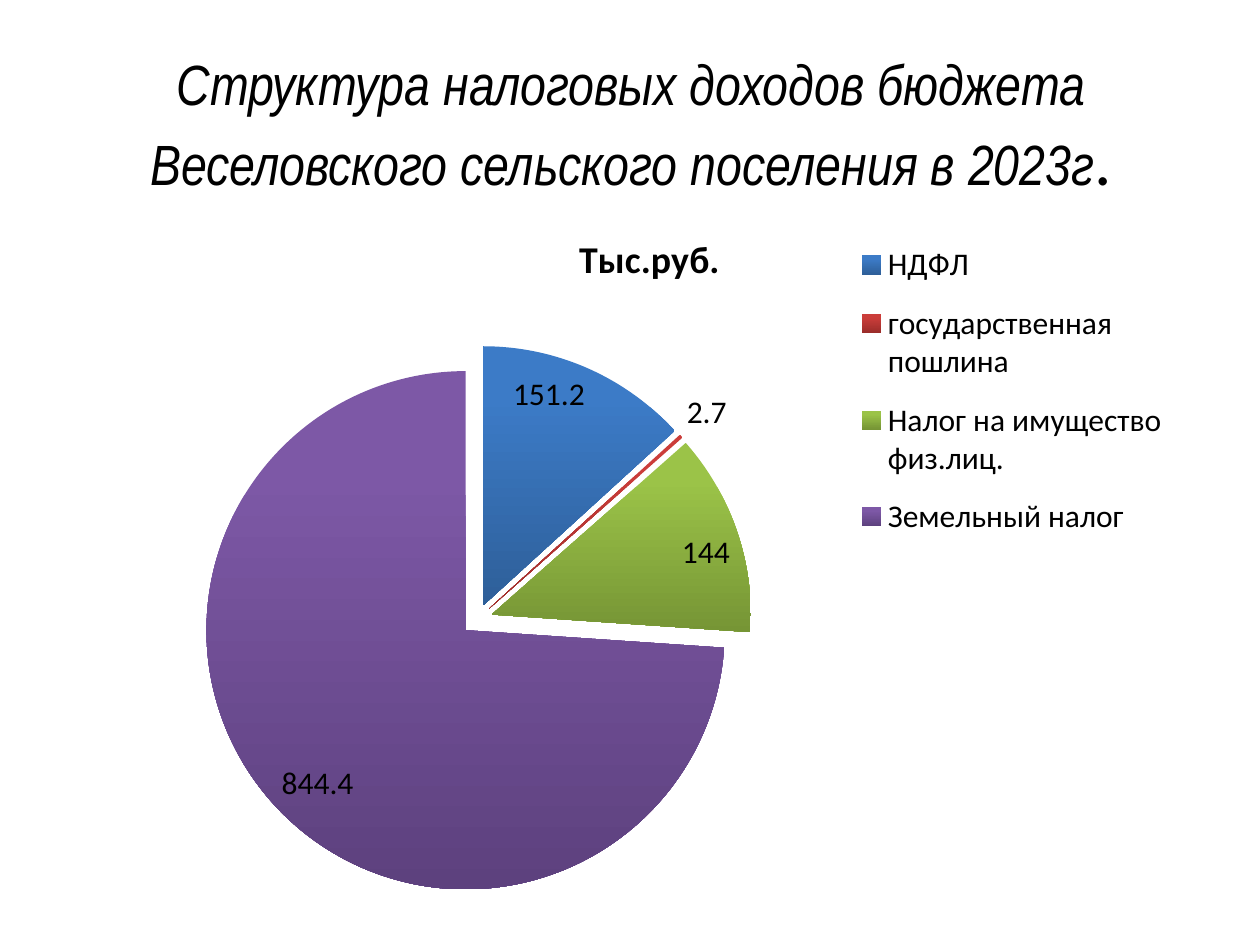
from lxml import etree
from pptx import Presentation
from pptx.chart.data import CategoryChartData
from pptx.dml.color import RGBColor
from pptx.enum.chart import XL_CHART_TYPE as ChartType
from pptx.enum.chart import XL_LABEL_POSITION as LabelPosition
from pptx.enum.chart import XL_LEGEND_POSITION as LegendPosition
from pptx.enum.text import MSO_ANCHOR, MSO_AUTO_SIZE, PP_ALIGN
from pptx.oxml.ns import qn
from pptx.util import Inches, Pt

UNIT = "Тыс.руб."
TAXES = [
    ("НДФЛ", 151.2, "3C7BC7", "2E5F99"),
    ("государственная пошлина", 2.7, "CB3D3A", "9B2D2A"),
    ("Налог на имущество физ.лиц.", 144, "9BC348", "769535"),
    ("Земельный налог", 844.4, "7D58A6", "5D417E"),
]


def color(value):
    return RGBColor.from_string(value)


def style_font(font, name, size, bold=False, italic=False):
    font.name = name
    font.size = Pt(size)
    font.bold = bold
    font.italic = italic
    font.color.rgb = color("000000")


def place(shape, left, top, width, height):
    shape.left, shape.top = Inches(left), Inches(top)
    shape.width, shape.height = Inches(width), Inches(height)


def add_title(slide):
    title = slide.shapes.title
    place(title, 0.51, 0.36, 9, 1.25)
    frame = title.text_frame
    frame.word_wrap = True
    frame.auto_size = MSO_AUTO_SIZE.NONE
    frame.vertical_anchor = MSO_ANCHOR.MIDDLE
    paragraph = frame.paragraphs[0]
    paragraph.alignment = PP_ALIGN.CENTER
    heading = paragraph.add_run()
    heading.text = "Структура налоговых доходов бюджета Веселовского сельского поселения в 2023г"
    style_font(heading.font, "Arial Narrow", 32.4, italic=True)
    period = paragraph.add_run()
    period.text = "."
    style_font(period.font, "Calibri", 39.6)


def set_layout(parent, before, shares, inner=False):
    for old in parent.findall(qn("c:layout")):
        parent.remove(old)
    layout = etree.Element(qn("c:layout"))
    manual = etree.SubElement(layout, qn("c:manualLayout"))
    settings = [("layoutTarget", "inner")] if inner else []
    settings += [("xMode", "edge"), ("yMode", "edge")]
    settings += zip("xywh", shares)
    for tag, value in settings:
        etree.SubElement(manual, qn(f"c:{tag}")).set("val", str(value))
    parent.find(qn(before)).addprevious(layout)


def fill_slice(point, top, bottom):
    fill = point.format.fill
    fill.gradient()
    fill.gradient_angle = 270
    for stop, position, value in zip(fill.gradient_stops, (0.2, 1), (top, bottom)):
        stop.position = position
        stop.color.rgb = color(value)


def style_series(plot):
    series = plot.series[0]
    for index, (_, _, top, bottom) in enumerate(TAXES):
        fill_slice(series.points[index], top, bottom)
    explosion = etree.Element(qn("c:explosion"))
    explosion.set("val", "6")
    series._element.find(qn("c:dPt")).addprevious(explosion)
    labels = series.data_labels
    labels.show_value = True
    labels.position = LabelPosition.INSIDE_END
    style_font(labels.font, "Calibri", 18)
    series.points[1].data_label.position = LabelPosition.OUTSIDE_END


def add_pie(slide):
    data = CategoryChartData()
    data.categories = [name for name, *_ in TAXES]
    data.add_series(UNIT, [value for _, value, *_ in TAXES])
    chart = slide.shapes.add_chart(
        ChartType.PIE, Inches(0.59), Inches(1.62), Inches(9.13), Inches(5.59), data
    ).chart
    style_font(chart.font, "Calibri", 18)
    chart.has_title = True
    paragraph = chart.chart_title.text_frame.paragraphs[0]
    paragraph.text = UNIT
    style_font(paragraph.font, "Calibri", 21.6, bold=True)
    chart.has_legend = True
    chart.legend.position = LegendPosition.RIGHT
    chart.legend.include_in_layout = False
    style_font(chart.legend.font, "Calibri", 18)
    set_layout(chart.legend._element, "c:overlay", (0.66, 0.03, 0.31, 0.47))
    plot = chart.plots[0]
    plot.vary_by_categories = True
    style_series(plot)
    set_layout(plot._element.getparent(), "c:pieChart", (0.11, 0.2, 0.48, 0.78), True)


def main():
    presentation = Presentation()
    presentation.slide_width = Inches(10)
    presentation.slide_height = Inches(7.5)
    slide = presentation.slides.add_slide(presentation.slide_layouts[5])
    add_title(slide)
    add_pie(slide)
    presentation.save("out.pptx")


if __name__ == "__main__":
    main()
